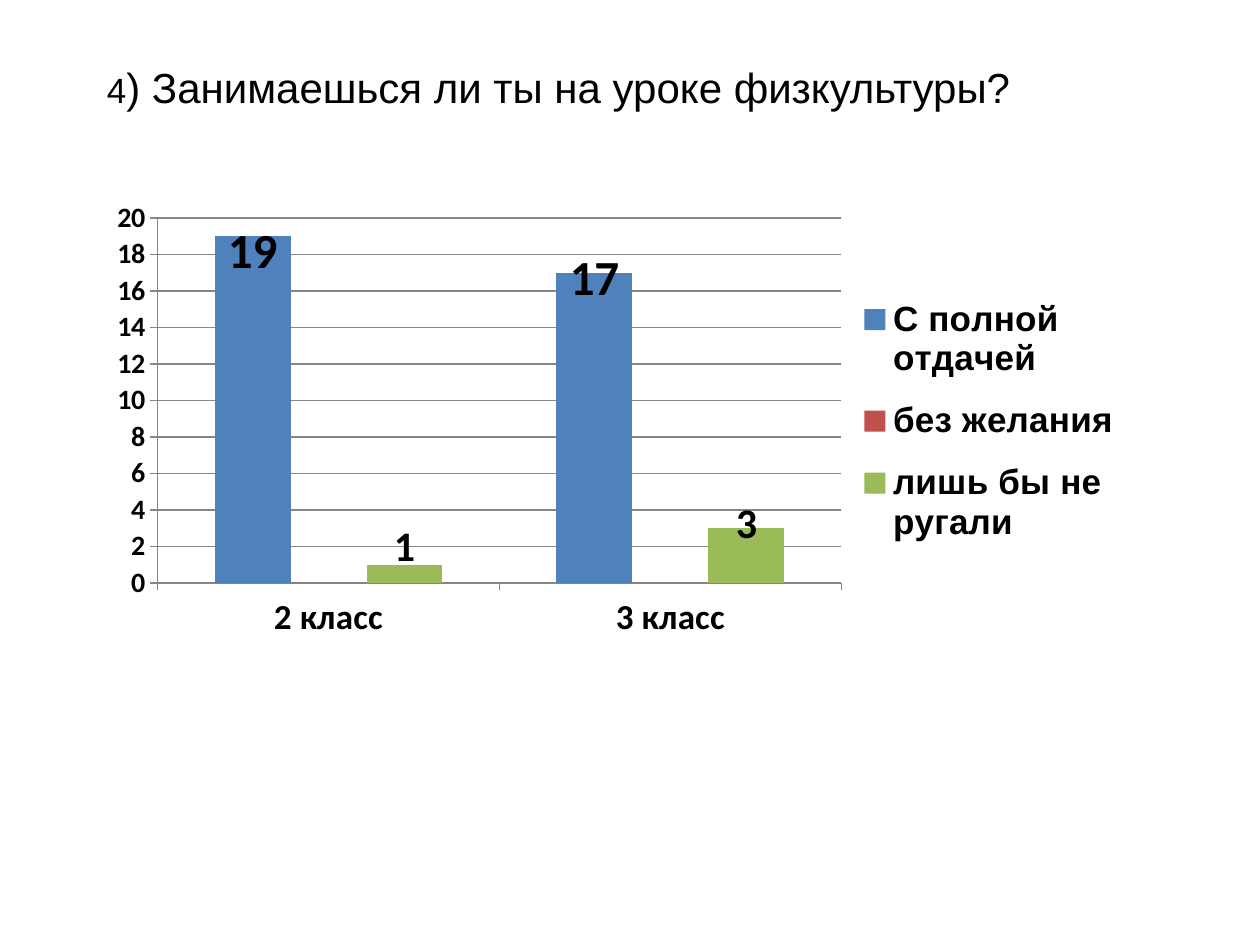
"""Build a survey slide with a title and a clustered column chart."""
import pptx
import pptx.chart.data
import pptx.dml.color
import pptx.enum.chart
import pptx.oxml
import pptx.oxml.ns
import pptx.util
from pptx.util import Inches

COLORS = {"text": "000000", "grid": "868686", "blue": "4F81BD", "red": "C0504D", "green": "9BBB59"}
CATEGORIES = ["2 класс", "3 класс"]
SERIES = [
    {"name": "С полной отдачей", "values": [19, 17], "color": "blue", "size": 28, "drops": [0.11, 0.09]},
    {"name": "без желания", "values": [0, 0], "color": "red", "size": None, "drops": []},
    {"name": "лишь бы не ругали", "values": [1, 3], "color": "green", "size": 24, "drops": [0.03, 0.06]},
]


def rgb(name):
    return pptx.dml.color.RGBColor.from_string(COLORS[name])


def style_font(font, size, **extra):
    values = {"size": pptx.util.Pt(size), "name": "Calibri", "bold": True, **extra}
    for key, value in values.items():
        setattr(font, key, value)
    font.color.rgb = rgb("text")


def set_layout(element, index, **values):
    for old in element.findall(pptx.oxml.ns.qn("c:layout")):
        element.remove(old)
    parts = "".join(f'<c:{key} val="{value}"/>' for key, value in values.items())
    namespace = pptx.oxml.ns.nsdecls("c")
    element.insert(index, pptx.oxml.parse_xml(
        f"<c:layout {namespace}><c:manualLayout>{parts}</c:manualLayout></c:layout>"))


def add_title(page):
    box = page.shapes.add_textbox(Inches(0.75), Inches(0.44), Inches(8.43), Inches(0.81))
    box.text_frame.word_wrap = True
    para = box.text_frame.paragraphs[0]
    for text, size in (("4", 20), (") Занимаешься ли ты на уроке физкультуры?", 24)):
        span = para.add_run()
        span.text = text
        style_font(span.font, size, name="Arial", bold=False)


def style_axis(axis, size):
    axis.major_tick_mark = pptx.enum.chart.XL_TICK_MARK.OUTSIDE
    axis.format.line.color.rgb = rgb("grid")
    style_font(axis.tick_labels.font, size)


def style_series(series, row):
    series.smooth = False if hasattr(series, "smooth") else None
    series.format.fill.solid()
    series.format.fill.fore_color.rgb = rgb(row["color"])
    if row["size"] is None:
        return
    labels = series.data_labels
    labels.show_value = True
    style_font(labels.font, row["size"])
    for index, drop in enumerate(row["drops"]):
        label = series.points[index].data_label
        style_font(label.font, row["size"])
        label.position = pptx.enum.chart.XL_LABEL_POSITION.OUTSIDE_END
    elements = series._element.iter(pptx.oxml.ns.qn("c:dLbl"))
    for element, drop in zip(list(elements), row["drops"]):
        set_layout(element, 1, x=0, y=drop)


def add_survey_chart(page):
    data = pptx.chart.data.CategoryChartData()
    data.categories = CATEGORIES
    for row in SERIES:
        data.add_series(row["name"], row["values"])
    chart = page.shapes.add_chart(
        pptx.enum.chart.XL_CHART_TYPE.COLUMN_CLUSTERED,
        Inches(0.75), Inches(1.55), Inches(8.35), Inches(3.62), data).chart
    style_font(chart.font, 10, bold=False)
    chart.has_title = False
    style_axis(chart.category_axis, 20)
    style_axis(chart.value_axis, 16)
    for key, value in {"minimum_scale": 0, "maximum_scale": 20, "major_unit": 2}.items():
        setattr(chart.value_axis, key, value)
    chart.value_axis.major_gridlines.format.line.color.rgb = rgb("grid")
    plot = chart.plots[0]
    for key, value in {"gap_width": 150, "overlap": 0, "vary_by_categories": False}.items():
        setattr(plot, key, value)
    for series, row in zip(plot.series, SERIES):
        style_series(series, row)
    chart.has_legend = True
    chart.legend.position = pptx.enum.chart.XL_LEGEND_POSITION.RIGHT
    chart.legend.include_in_layout = False
    style_font(chart.legend.font, 20, name="Arial")
    set_layout(chart.legend._element, 1, xMode="edge", yMode="edge", x=0.71, y=0.18, w=0.28, h=0.63)
    plot_area = chart._chartSpace.chart.plotArea
    set_layout(plot_area, 0, layoutTarget="inner", xMode="edge", yMode="edge",
               x=0.06, y=0.05, w=0.65, h=0.8)


def main():
    deck = pptx.Presentation()
    deck.slide_width, deck.slide_height = Inches(10), Inches(7.5)
    page = deck.slides.add_slide(deck.slide_layouts[6])
    add_title(page)
    add_survey_chart(page)
    deck.save("out.pptx")


if __name__ == "__main__":
    main()
